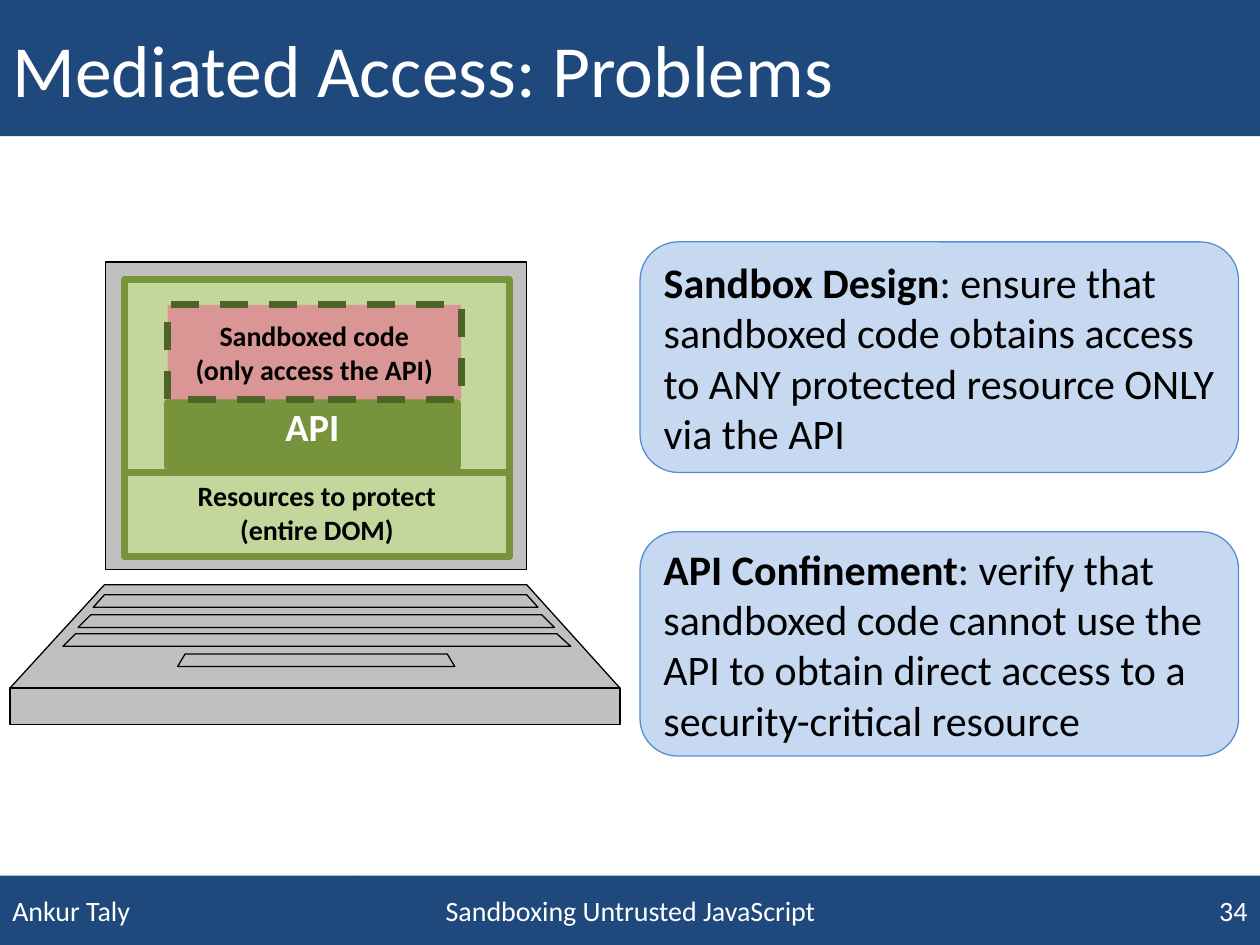
from pptx import Presentation
from pptx.dml.color import RGBColor
from pptx.enum.dml import MSO_LINE_DASH_STYLE as Dash
from pptx.enum.shapes import MSO_SHAPE as Shape
from pptx.enum.text import MSO_ANCHOR as Anchor, MSO_AUTO_SIZE as AutoSize, PP_ALIGN as Align
from pptx.util import Inches, Pt

NAVY, WHITE, BLACK = "1F497D", "FFFFFF", "000000"
PALE_GREEN, GREEN, DARK_GREEN = "C3D69B", "77933C", "4F6228"
GREY, PINK, PALE_BLUE, BLUE = "C0C0C0", "D99694", "C6D9F1", "558ED5"


def paint(shape, fill, line=None, width=0.75):
    shape.shadow.inherit = False
    shape.fill.solid()
    shape.fill.fore_color.rgb = RGBColor.from_string(fill)
    if line:
        shape.line.color.rgb = RGBColor.from_string(line)
        shape.line.width = Pt(width)
    else:
        shape.line.fill.background()


def write(shape, paragraphs, size, color, align=Align.LEFT, anchor=Anchor.MIDDLE, **frame_format):
    frame = shape.text_frame
    frame_values = {"word_wrap": True, "auto_size": AutoSize.NONE, "vertical_anchor": anchor, **frame_format}
    for name, value in frame_values.items():
        setattr(frame, name, value)
    for index, runs in enumerate(paragraphs):
        paragraph = frame.add_paragraph() if index else frame.paragraphs[0]
        paragraph.alignment = align
        for words, bold in runs:
            run = paragraph.add_run()
            run.text = words
            for name, value in {"name": "Calibri", "size": Pt(size), "bold": bold}.items():
                setattr(run.font, name, value)
            run.font.color.rgb = RGBColor.from_string(color)


deck = Presentation()
deck.slide_width, deck.slide_height = Inches(10), Inches(7.5)
slide = deck.slides.add_slide(deck.slide_layouts[5])
shapes = slide.shapes

title = shapes.title
title_place = {"left": 0, "top": 0, "width": 10, "height": 1.08}
for name, value in title_place.items():
    setattr(title, name, Inches(value))
paint(title, NAVY)
write(title, [[("Mediated Access: Problems", False)]], 42, WHITE)

footer_cells = [
    (0, 2.84, "Ankur Taly", Align.LEFT),
    (2.83, 4.35, "Sandboxing Untrusted JavaScript", Align.CENTER),
    (7.17, 2.83, "34", Align.RIGHT),
]
for left, width, words, align in footer_cells:
    footer = shapes.add_shape(Shape.RECTANGLE, Inches(left), Inches(6.95), Inches(width), Inches(0.55))
    paint(footer, NAVY)
    write(footer, [[(words, False)]], 16, WHITE, align)

laptop_parts = [
    (2.08, 4.52, 0.84, 4.18, 0.84, 4.18),
    (4.64, 5.46, 0.83, 4.18, 0.08, 4.92),
    (5.46, 5.75, 0.08, 4.92, 0.08, 4.92),
    (4.72, 4.82, 0.83, 4.18, 0.74, 4.27),
    (4.88, 4.98, 0.72, 4.30, 0.62, 4.40),
    (5.03, 5.13, 0.60, 4.42, 0.50, 4.53),
    (5.19, 5.29, 1.47, 3.55, 1.41, 3.61),
]
for top, bottom, upper_left, upper_right, lower_left, lower_right in laptop_parts:
    outline = shapes.build_freeform(Inches(upper_left), Inches(top))
    corners = [(upper_right, top), (lower_right, bottom), (lower_left, bottom)]
    outline.add_line_segments([(Inches(x), Inches(y)) for x, y in corners], close=True)
    paint(outline.convert_to_shape(), GREY, BLACK)

screen = shapes.add_shape(Shape.RECTANGLE, Inches(0.99), Inches(2.22), Inches(3.05), Inches(2.17))
paint(screen, PALE_GREEN, GREEN, 4)

resources = shapes.add_shape(Shape.RECTANGLE, Inches(0.99), Inches(3.75), Inches(3.05), Inches(0.67))
paint(resources, PALE_GREEN, GREEN, 4)
write(resources, [[("Resources to protect", True)], [("(entire DOM)", True)]], 16, BLACK, Align.CENTER, Anchor.TOP)

api = shapes.add_shape(Shape.RECTANGLE, Inches(1.33), Inches(3.2), Inches(2.3), Inches(0.5))
paint(api, GREEN, GREEN, 4.5)
write(api, [[("API", True)]], 22, WHITE, Align.CENTER, Anchor.TOP, margin_top=0, margin_bottom=0)

sandbox = shapes.add_shape(Shape.RECTANGLE, Inches(1.33), Inches(2.42), Inches(2.33), Inches(0.75))
paint(sandbox, PINK, DARK_GREEN, 4)
sandbox.line.dash_style = Dash.DASH
write(sandbox, [[("Sandboxed code", True)], [("(only access the API)", True)]], 16, BLACK, Align.CENTER)

problems = [
    (1.92, 1.83, "Sandbox Design",
     ": ensure that sandboxed code obtains access to ANY protected resource ONLY via the API"),
    (4.22, 1.78, "API Confinement",
     ": verify that sandboxed code cannot use the API to obtain direct access to a security-critical resource"),
]
for top, height, term, meaning in problems:
    problem = shapes.add_shape(Shape.ROUNDED_RECTANGLE, Inches(5.08), Inches(top), Inches(4.75), Inches(height))
    paint(problem, PALE_BLUE, BLUE)
    write(problem, [[(term, True), (meaning, False)]], 24, BLACK)

deck.save("out.pptx")
